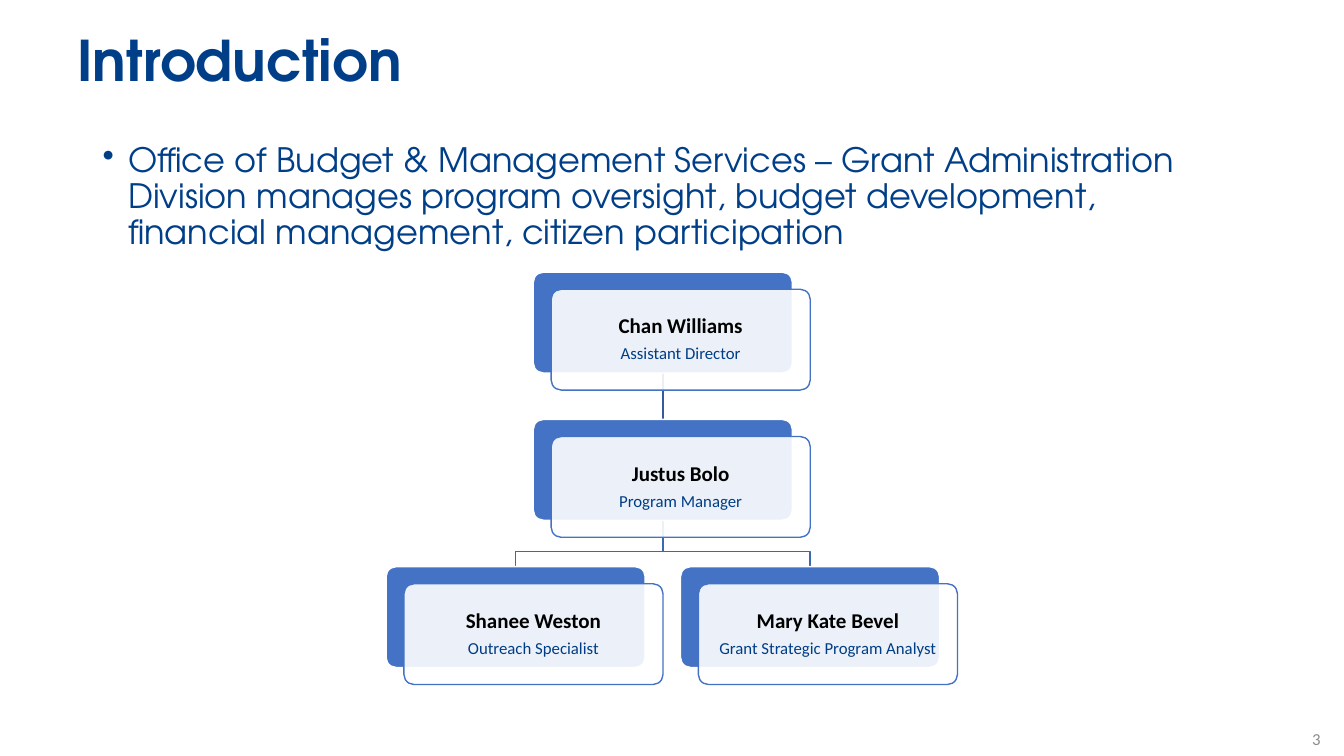
from lxml import etree
from pptx import Presentation
from pptx.dml.color import RGBColor
from pptx.enum.shapes import MSO_CONNECTOR as Connector, MSO_SHAPE as Shape
from pptx.enum.text import MSO_ANCHOR as Anchor, PP_ALIGN as Align
from pptx.oxml.ns import qn
from pptx.util import Cm, Pt

NAVY = RGBColor(0x00, 0x3F, 0x88)
ROLE_BLUE = RGBColor(0x00, 0x3D, 0x85)
CARD_BLUE = RGBColor(0x44, 0x72, 0xC4)
BRANCH_BLUE = RGBColor(0x3E, 0x67, 0xB2)
TRUNK_BLUE = RGBColor(0x36, 0x5B, 0x9D)
WHITE = RGBColor(0xFF, 0xFF, 0xFF)
BLACK = RGBColor(0x00, 0x00, 0x00)
GRAY = RGBColor(0x8C, 0x8C, 0x8C)
HEADING_FONT = "TeX Gyre Adventor"
CARD_FONT = "Calibri"

CARD_WIDTH, CARD_HEIGHT = 6.53, 2.54
SHIFT_X, SHIFT_Y = 0.45, 0.43
PITCH = 3.71
ELBOW_DROP = 0.79


def style_text(paragraph, text, font_name, size, color, bold=False, align=Align.LEFT):
    paragraph.add_run().text = text
    paragraph.alignment = align
    font = paragraph.font
    font.name, font.size, font.bold = font_name, Pt(size), bold
    font.color.rgb = color


def add_text(slide, box, text, font_name, size, color, anchor=Anchor.MIDDLE, **style):
    frame = slide.shapes.add_textbox(*map(Cm, box)).text_frame
    frame.word_wrap = True
    frame.vertical_anchor = anchor
    style_text(frame.paragraphs[0], text, font_name, size, color, **style)
    return frame.paragraphs[0]


def add_title(slide, box, text):
    add_text(slide, box, text, HEADING_FONT, 40, NAVY, bold=True).line_spacing = 0.9


def add_body(slide, box, text):
    paragraph = add_text(slide, box, text, HEADING_FONT, 24, NAVY, anchor=Anchor.TOP)
    paragraph.line_spacing = 0.9
    properties = paragraph._p.get_or_add_pPr()
    properties.set("marL", str(Cm(0.64)))
    properties.set("indent", str(Cm(-0.64)))
    bullet = etree.Element(qn("a:buChar"), char="•")
    properties.find(qn("a:defRPr")).addprevious(bullet)


def add_card_layer(slide, left, top, fill_color, line_color):
    shape = slide.shapes.add_shape(
        Shape.ROUNDED_RECTANGLE, Cm(left), Cm(top), Cm(CARD_WIDTH), Cm(CARD_HEIGHT))
    shape.adjustments[0] = 0.1
    shape.shadow.inherit = False
    shape.fill.solid()
    shape.fill.fore_color.rgb = fill_color
    shape.line.color.rgb = line_color
    shape.line.width = Pt(1)
    return shape


def add_card(slide, left, top, name, role):
    add_card_layer(slide, left, top, CARD_BLUE, WHITE)
    front = add_card_layer(slide, left + SHIFT_X, top + SHIFT_Y, WHITE, CARD_BLUE)
    color = front.fill._xPr.find(qn("a:solidFill"))[0]
    etree.SubElement(color, qn("a:alpha"), val="90000")
    frame = front.text_frame
    frame.word_wrap = True
    frame.vertical_anchor = Anchor.MIDDLE
    frame.margin_left = frame.margin_right = Cm(0.15)
    frame.margin_top = frame.margin_bottom = Cm(0.15)
    name_line, role_line = frame.paragraphs[0], frame.add_paragraph()
    style_text(name_line, name, CARD_FONT, 15, BLACK, bold=True, align=Align.CENTER)
    style_text(role_line, role, CARD_FONT, 12, ROLE_BLUE, align=Align.CENTER)
    for paragraph in (name_line, role_line):
        paragraph.line_spacing = 0.9
        paragraph.space_after = Pt(5)


def add_trunk(slide, center, top, bottom):
    trunk = slide.shapes.add_connector(
        Connector.STRAIGHT, Cm(center), Cm(top), Cm(center), Cm(bottom))
    trunk.line.color.rgb = TRUNK_BLUE
    trunk.line.width = Pt(1)
    etree.SubElement(trunk._element.spPr, qn("a:effectLst"))


def add_branch(slide, center, top, child_center, bottom):
    elbow = top + ELBOW_DROP
    builder = slide.shapes.build_freeform(Cm(center), Cm(top))
    points = [(center, elbow), (child_center, elbow), (child_center, bottom)]
    builder.add_line_segments([(Cm(x), Cm(y)) for x, y in points], close=False)
    branch = builder.convert_to_shape()
    branch.shadow.inherit = False
    branch.fill.background()
    branch.line.color.rgb = BRANCH_BLUE
    branch.line.width = Pt(1)


def add_org_chart(slide, left, top, director, manager, staff):
    middle = left + PITCH
    center = middle + CARD_WIDTH / 2
    manager_top, staff_top = top + PITCH, top + 2 * PITCH
    staff_lefts = [left + 2 * PITCH * index for index in range(len(staff))]
    for staff_left in reversed(staff_lefts):
        add_branch(slide, center, manager_top + CARD_HEIGHT,
                   staff_left + CARD_WIDTH / 2, staff_top)
    add_trunk(slide, center, top + CARD_HEIGHT, manager_top)
    add_card(slide, middle, top, *director)
    add_card(slide, middle, manager_top, *manager)
    for staff_left, person in zip(staff_lefts, staff):
        add_card(slide, staff_left, staff_top, *person)


def main():
    presentation = Presentation()
    presentation.slide_width, presentation.slide_height = Cm(33.87), Cm(19.05)
    slide = presentation.slides.add_slide(presentation.slide_layouts[6])
    add_title(slide, (1.7, 0.66, 29.21, 1.88), "Introduction")
    add_body(slide, (2.34, 3.48, 29.21, 12.09),
             "Office of Budget & Management Services – Grant Administration Division "
             "manages program oversight, budget development, financial management, "
             "citizen participation")
    add_text(slide, (25.91, 18.11, 7.62, 1.02), "3", CARD_FONT, 12, GRAY, align=Align.RIGHT)
    add_org_chart(
        slide, 9.73, 6.86,
        director=("Chan Williams", "Assistant Director"),
        manager=("Justus Bolo", "Program Manager"),
        staff=[("Shanee Weston", "Outreach Specialist"),
               ("Mary Kate Bevel", "Grant Strategic Program Analyst")])
    presentation.save("out.pptx")


if __name__ == "__main__":
    main()
